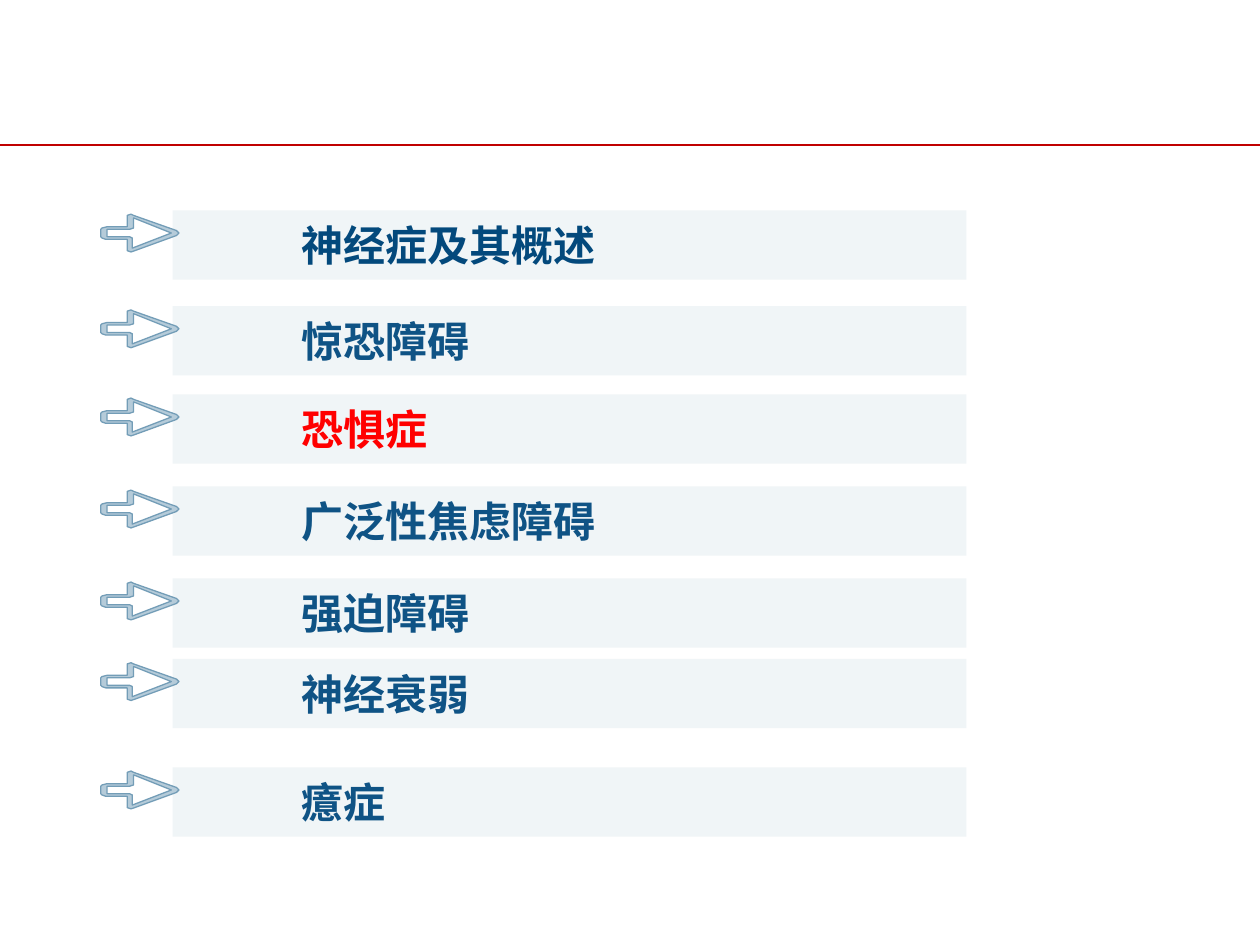
import pptx
import pptx.dml.color
import pptx.enum.shapes
import pptx.enum.text
import pptx.oxml.ns
import pptx.util
from pptx.util import Inches

RED_LINE = pptx.dml.color.RGBColor(0xC0, 0x00, 0x00)
BAR = pptx.dml.color.RGBColor(0xF0, 0xF5, 0xF7)
ARROW_FILL = pptx.dml.color.RGBColor(0xB5, 0xCB, 0xD9)
ARROW_LINE = pptx.dml.color.RGBColor(0x73, 0x9D, 0xB7)
NAVY = pptx.dml.color.RGBColor(0x03, 0x49, 0x7C)
BLUE = pptx.dml.color.RGBColor(0x0F, 0x53, 0x85)
RED = pptx.dml.color.RGBColor(0xFF, 0x00, 0x00)

# Topic, top of its bar in inches, text colour
TOPICS = [
    ("神经症及其概述", 1.67, NAVY),
    ("惊恐障碍", 2.43, BLUE),
    ("恐惧症", 3.13, RED),
    ("广泛性焦虑障碍", 3.86, BLUE),
    ("强迫障碍", 4.59, BLUE),
    ("神经衰弱", 5.23, BLUE),
    ("癔症", 6.09, BLUE),
]

# Hollow arrow: outer and inner contour, in inches from its top left corner
ARROW_LEFT, ARROW_DROP = 0.8, 0.03
OUTER = [
    (0.62, 0.15), (0.6, 0.13), (0.26, 0.01), (0.24, 0), (0.21, 0.01),
    (0.21, 0.1), (0.05, 0.1), (0.01, 0.11), (0, 0.12), (0, 0.18),
    (0.01, 0.19), (0.04, 0.2), (0.21, 0.2), (0.21, 0.29), (0.24, 0.3),
    (0.27, 0.29), (0.6, 0.17),
]
INNER = [
    (0.25, 0.27), (0.25, 0.19), (0.23, 0.18), (0.05, 0.18), (0.05, 0.12),
    (0.23, 0.12), (0.26, 0.11), (0.26, 0.03), (0.56, 0.15),
]

TEXT_FRAME = {
    "word_wrap": True,
    "vertical_anchor": pptx.enum.text.MSO_ANCHOR.MIDDLE,
    "margin_left": Inches(1.02),
    "margin_right": Inches(0.24),
    "margin_top": Inches(0.05),
    "margin_bottom": Inches(0.05),
}
FONT = {"name": "Arial", "size": pptx.util.Pt(24), "bold": True}

prs = pptx.Presentation()
prs.slide_width, prs.slide_height = Inches(10), Inches(7.5)
s = prs.slides.add_slide(prs.slide_layouts[6])

# Header rule
rule = s.shapes.add_connector(
    pptx.enum.shapes.MSO_CONNECTOR.STRAIGHT,
    Inches(0), Inches(1.15), Inches(10), Inches(1.15))
rule.line.color.rgb = RED_LINE
rule.line.width = pptx.util.Pt(1.5)
rule._element.spPr.append(pptx.oxml.parse_xml(
    "<a:effectLst %s/>" % pptx.oxml.ns.nsdecls("a")))

for topic, top, color in TOPICS:
    # Bar with the topic
    sp = s.shapes.add_shape(
        pptx.enum.shapes.MSO_SHAPE.RECTANGLE,
        Inches(1.37), Inches(top), Inches(6.3), Inches(0.55))
    sp.shadow.inherit = False
    sp.fill.solid()
    sp.fill.fore_color.rgb = BAR
    sp.line.fill.background()
    tf = sp.text_frame
    for key, value in TEXT_FRAME.items():
        setattr(tf, key, value)
    p = tf.paragraphs[0]
    p.alignment = pptx.enum.text.PP_ALIGN.LEFT
    r = p.add_run()
    r.text = topic
    for key, value in FONT.items():
        setattr(r.font, key, value)
    r.font.color.rgb = color

    # Arrow beside the bar
    outer, inner = [
        [(Inches(ARROW_LEFT + x), Inches(top + ARROW_DROP + y)) for x, y in contour]
        for contour in (OUTER, INNER)]
    fb = s.shapes.build_freeform(*outer[0])
    fb.add_line_segments(outer[1:], close=True)
    fb.move_to(*inner[0])
    fb.add_line_segments(inner[1:], close=True)
    arrow = fb.convert_to_shape()
    arrow.shadow.inherit = False
    arrow.fill.solid()
    arrow.fill.fore_color.rgb = ARROW_FILL
    arrow.line.color.rgb = ARROW_LINE
    arrow.line.width = pptx.util.Pt(0.75)

prs.save("out.pptx")
